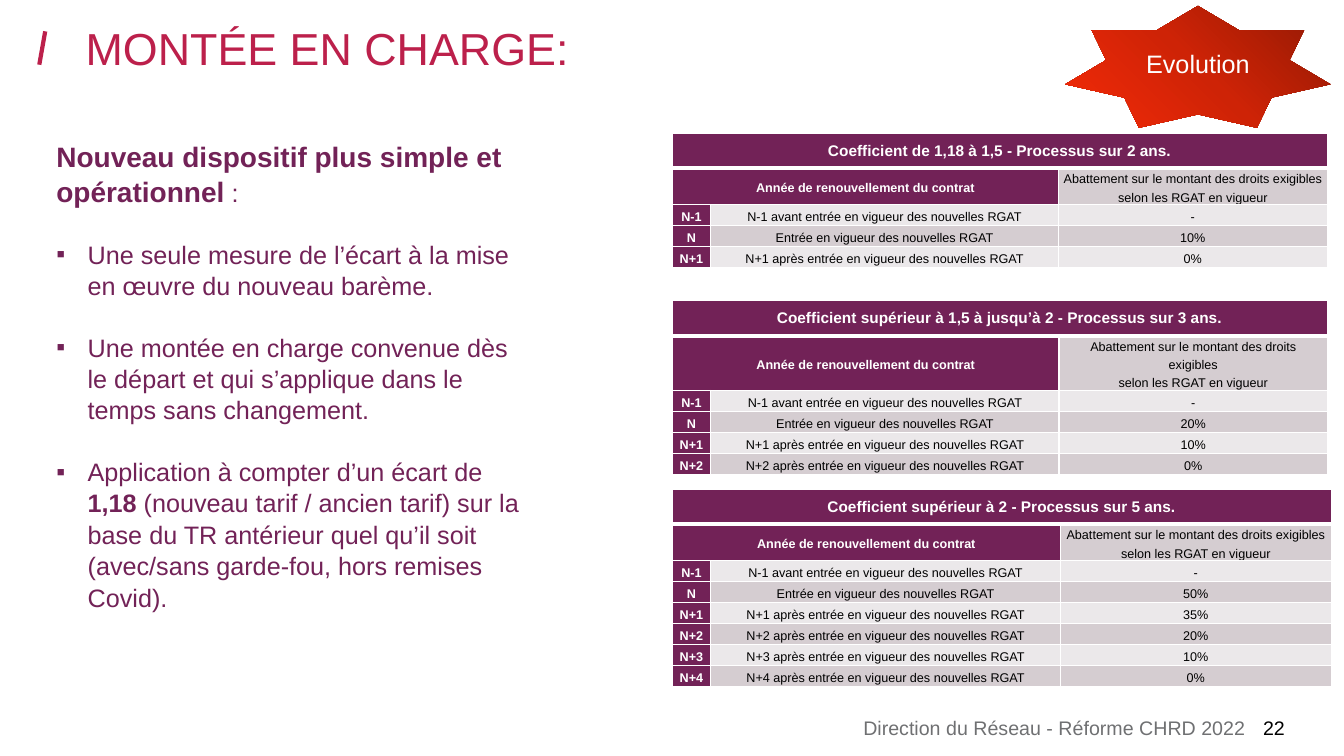
from copy import deepcopy
from dataclasses import dataclass

from lxml import etree
from pptx import Presentation
from pptx.dml.color import RGBColor
from pptx.enum.shapes import MSO_CONNECTOR, MSO_SHAPE
from pptx.enum.text import MSO_ANCHOR, PP_ALIGN
from pptx.oxml.ns import qn
from pptx.util import Cm, Pt

LEFT, CENTER, RIGHT = PP_ALIGN.LEFT, PP_ALIGN.CENTER, PP_ALIGN.RIGHT
MIDDLE = MSO_ANCHOR.MIDDLE
STRAIGHT = MSO_CONNECTOR.STRAIGHT
STAR = MSO_SHAPE.STAR_7_POINT

FONT = "Arial"
PLUM, CRIMSON, GREY = "722257", "BC204B", "6F7072"
BLACK, WHITE = "000000", "FFFFFF"
BANDS = ("EBE8EA", "D5CDD1")
STAR_STOPS = ((0, "911904"), (0.5, "CE2306"), (1, "F42A08"))


@dataclass
class Label:
    text: str
    left: float
    top: float
    width: float
    height: float
    size: float
    color: str
    align: PP_ALIGN = LEFT
    spacing: float = 1


@dataclass
class Schedule:
    title: str
    top: float
    widths: tuple[float, float, float]
    rates: tuple[str, ...]


@dataclass
class Span:
    text: str
    size: float = 18
    bold: bool = False


LABELS = (
    Label("MONTÉE EN CHARGE:", 2.16, 0.79, 30.56, 1.93, 32, CRIMSON, spacing=0.8),
    Label("Direction du Réseau - Réforme CHRD 2022", 18.39, 18.03, 13, 0.61, 14, GREY, RIGHT),
    Label("22", 31.83, 18.03, 1.12, 0.61, 14, BLACK),
)
SCHEDULES = (
    Schedule("Coefficient de 1,18 à 1,5 - Processus sur 2 ans.",
             3.35, (0.97, 8.76, 6.78), ("-", "10%", "0%")),
    Schedule("Coefficient supérieur à 1,5 à jusqu’à 2 - Processus sur 3 ans.",
             7.57, (0.97, 8.78, 6.76), ("-", "20%", "10%", "0%")),
    Schedule("Coefficient supérieur à 2 - Processus sur 5 ans.",
             12.32, (0.97, 8.81, 6.83), ("-", "50%", "35%", "20%", "10%", "0%")),
)
PARAGRAPHS = (
    (Span("Nouveau dispositif plus simple et opérationnel", 20, True), Span(" :")),
    (Span("Une seule mesure de l’écart à la mise en œuvre du nouveau barème."),),
    (Span("Une montée en charge convenue dès le départ et qui s’applique dans le "
          "temps sans changement."),),
    (Span("Application à compter d’un écart de "), Span("1,18 ", bold=True),
     Span("(nouveau tarif / ancien tarif) sur la base du TR antérieur quel qu’il soit "
          "(avec/sans garde-fou, hors remises Covid).")),
)


def rgb(color: str) -> RGBColor:
    return RGBColor.from_string(color)


def style_run(r, size: float, color: str, bold: bool = False) -> None:
    r.font.name = FONT
    r.font.size = Pt(size)
    r.font.bold = bold
    r.font.color.rgb = rgb(color)


def draw_label(s, label: Label) -> None:
    box = s.shapes.add_textbox(Cm(label.left), Cm(label.top), Cm(label.width), Cm(label.height))
    tf = box.text_frame
    tf.word_wrap = True
    tf.margin_left = tf.margin_top = tf.margin_right = tf.margin_bottom = 0
    p = tf.paragraphs[0]
    p.text = label.text
    p.alignment = label.align
    p.line_spacing = label.spacing
    style_run(p.runs[0], label.size, label.color)


def draw_slash(s) -> None:
    slash = s.shapes.add_connector(STRAIGHT, Cm(0.99), Cm(1.63), Cm(1.14), Cm(0.79))
    slash.line.color.rgb = rgb(CRIMSON)
    slash.line.width = Pt(3)
    etree.SubElement(slash._element.spPr, qn("a:effectLst"))


def draw_arguments(s) -> None:
    tf = s.shapes.add_textbox(Cm(1.17), Cm(3.35), Cm(12.4), Cm(11.96)).text_frame
    tf.word_wrap = True
    for i, spans in enumerate(PARAGRAPHS):
        p = tf.add_paragraph() if i else tf.paragraphs[0]
        p.line_spacing = 1.04
        if i:
            p.space_before = Pt(21.5)
            pPr = p._p.get_or_add_pPr()
            pPr.set("marL", str(Cm(0.79)))
            pPr.set("indent", str(-Cm(0.79)))
            etree.SubElement(pPr, qn("a:buFont"), typeface=FONT)
            etree.SubElement(pPr, qn("a:buChar"), char="▪")
        for span in spans:
            r = p.add_run()
            r.text = span.text
            style_run(r, span.size, PLUM, span.bold)


def set_borders(cell, top: float, bottom: float) -> None:
    tcPr = cell._tc.get_or_add_tcPr()
    for side, width in (("L", 1), ("R", 1), ("T", top), ("B", bottom)):
        ln = etree.SubElement(tcPr, qn(f"a:ln{side}"), w=str(Pt(width)))
        fill = etree.SubElement(ln, qn("a:solidFill"))
        etree.SubElement(fill, qn("a:srgbClr"), val=WHITE)


def fill_cell(cell, text: str, row: int, fill: str) -> None:
    set_borders(cell, 3 if row == 1 else 1, 3 if row == 0 else 1)
    cell.fill.solid()
    cell.fill.fore_color.rgb = rgb(fill)
    cell.margin_left = cell.margin_right = Cm(0.13)
    cell.margin_top = cell.margin_bottom = 0
    cell.vertical_anchor = MIDDLE
    p = cell.text_frame.paragraphs[0]
    p.text = text
    p.alignment = CENTER
    p.line_spacing = Pt(13)
    dark = fill == PLUM
    for r in p.runs:
        style_run(r, 9 if row else 11, WHITE if dark else BLACK, dark)


def draw_schedule(s, schedule: Schedule) -> None:
    rows = [
        (schedule.title, "", ""),
        ("Année de renouvellement du contrat", "",
         "Abattement sur le montant des droits exigibles\nselon les RGAT en vigueur"),
    ]
    for offset, rate in enumerate(schedule.rates, -1):
        year = f"N{offset:+d}" if offset else "N"
        moment = {-1: f"{year} avant entrée", 0: "Entrée"}.get(offset, f"{year} après entrée")
        rows.append((year, f"{moment} en vigueur des nouvelles RGAT", rate))
    heights = [0.89, 0.86] + [0.53] * len(schedule.rates)
    frame = s.shapes.add_table(len(rows), 3, Cm(16.94), Cm(schedule.top),
                               Cm(sum(schedule.widths)), Cm(sum(heights)))
    table = frame.table
    table.first_row = table.horz_banding = False
    for column, width in zip(table.columns, schedule.widths):
        column.width = Cm(width)
    for i, texts in enumerate(rows):
        table.rows[i].height = Cm(heights[i])
        for j, text in enumerate(texts):
            heading = i == 0 or j == 0 or (i == 1 and j == 1)
            fill_cell(table.cell(i, j), text, i, PLUM if heading else BANDS[i % 2])
    table.cell(0, 0).merge(table.cell(0, 2))
    table.cell(1, 0).merge(table.cell(1, 1))


def draw_star(s) -> None:
    sp = s.shapes.add_shape(STAR, Cm(26.85), Cm(0.15), Cm(6.68), Cm(3.07))
    sp.shadow.inherit = False
    sp.line.fill.background()
    sp.fill.gradient()
    sp.fill.gradient_angle = 225
    stops = sp._element.spPr.find(qn("a:gradFill")).find(qn("a:gsLst"))
    stops.append(deepcopy(stops[0]))
    for stop, (position, color) in zip(sp.fill.gradient_stops, STAR_STOPS):
        stop.position = position
        stop.color.rgb = rgb(color)
    tf = sp.text_frame
    tf.text = "Evolution"
    tf.vertical_anchor = MIDDLE
    p = tf.paragraphs[0]
    p.alignment = CENTER
    style_run(p.runs[0], 18, WHITE)


def main() -> None:
    prs = Presentation()
    prs.slide_width, prs.slide_height = Cm(33.87), Cm(19.05)
    s = prs.slides.add_slide(prs.slide_layouts[6])
    draw_slash(s)
    for label in LABELS:
        draw_label(s, label)
    draw_arguments(s)
    for schedule in SCHEDULES:
        draw_schedule(s, schedule)
    draw_star(s)
    prs.save("out.pptx")


if __name__ == "__main__":
    main()
